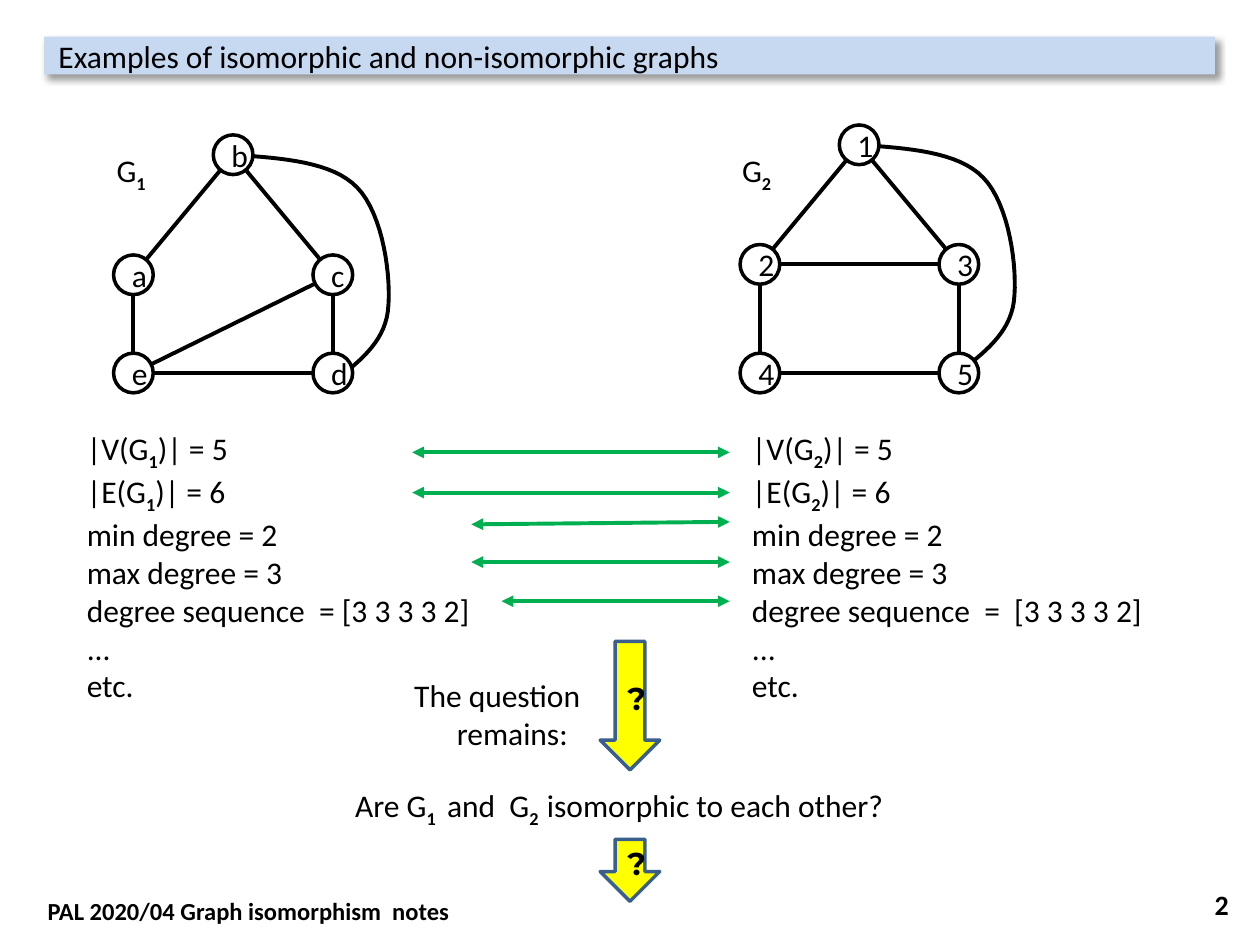
"""Build a slide comparing two graphs and asking whether they are isomorphic."""
from lxml import etree
from pptx import Presentation
from pptx import util as u
from pptx.dml import color
from pptx.enum import shapes, text
from pptx.oxml import ns


def paint(shape, line, width, fill=None):
    shape.shadow.inherit = False
    shape.line.color.rgb = color.RGBColor.from_string(line)
    shape.line.width = u.Pt(width)
    if fill:
        shape.fill.solid()
        shape.fill.fore_color.rgb = color.RGBColor.from_string(fill)
    else:
        shape.fill.background()


def write(frame, lines, size=18, bold=False, font="Calibri", align=text.PP_ALIGN.LEFT):
    """Write lines in which text between underscores is a bold subscript."""
    frame.word_wrap = True
    frame.text = "\n".join(lines)
    for paragraph, line in zip(frame.paragraphs, lines):
        paragraph.alignment = align
        pieces = line.split("_")
        paragraph.text = pieces[0]
        for piece in pieces[1:]:
            paragraph.add_run().text = piece
        for index, run in enumerate(paragraph.runs):
            run.font.name = font
            run.font.size = u.Pt(size)
            run.font.bold = bold or index % 2 == 1
            run.font.color.rgb = color.RGBColor.from_string("000000")
            if index % 2:
                run.font._element.set("baseline", "-25000")


presentation = Presentation()
presentation.slide_width = u.Cm(25.4)
presentation.slide_height = u.Cm(19.05)
slide = presentation.slides.add_slide(presentation.slide_layouts[6])

graphs = [
    ({"b": (4.7, 3.12), "a": (2.69, 5.54), "c": (6.71, 5.54), "e": (2.69, 7.52), "d": (6.71, 7.52)},
     ["ab", "bc", "ae", "ce", "cd", "ed"], "b"),
    ({"1": (17.32, 2.92), "2": (15.32, 5.33), "3": (19.33, 5.33), "4": (15.32, 7.52), "5": (19.33, 7.52)},
     ["12", "13", "23", "24", "35", "45"], "1"),
]
bends = [
    [(0, 0), (1, 0.07), (2, 0.14), (2.5, 0.66)],
    [(2.5, 0.66), (3.03, 1.2), (3.2, 2.5), (3.12, 3.16)],
    [(3.12, 3.16), (3.03, 3.82), (2.5, 4.2), (2, 4.6)],
]
steps = 16
arrow_right = 14.71
arrows = [(8.31, 9.12, 9.12), (8.31, 9.93, 9.93), (9.5, 10.57, 10.52),
          (9.5, 11.33, 11.33), (10.11, 12.12, 12.12)]

links = [(nodes[start], nodes[end], "000000", False)
         for nodes, edges, top in graphs for start, end in edges]
links += [((left, y), (arrow_right, end_y), "00B050", True) for left, y, end_y in arrows]
for start, end, line_color, has_heads in links:
    connector = slide.shapes.add_connector(
        shapes.MSO_CONNECTOR.STRAIGHT, *[u.Cm(value) for value in start + end])
    connector.line.color.rgb = color.RGBColor.from_string(line_color)
    connector.line.width = u.Pt(2.25)
    if has_heads:
        for tag in ("a:headEnd", "a:tailEnd"):
            etree.SubElement(connector.line._get_or_add_ln(), ns.qn(tag), type="triangle")
    etree.SubElement(connector._element.spPr, ns.qn("a:effectLst"))

for nodes, edges, top in graphs:
    x, y = nodes[top]
    points = []
    for bend in bends:
        for step in range(1, steps + 1):
            t = step / steps
            weights = [(1 - t) ** 3, 3 * t * (1 - t) ** 2, 3 * t ** 2 * (1 - t), t ** 3]
            points.append((u.Cm(x + sum(w * p[0] for w, p in zip(weights, bend))),
                           u.Cm(y + sum(w * p[1] for w, p in zip(weights, bend)))))
    builder = slide.shapes.build_freeform(u.Cm(x), u.Cm(y))
    builder.add_line_segments(points, close=False)
    paint(builder.convert_to_shape(), "000000", 2.25)

    for name, (x, y) in nodes.items():
        node = slide.shapes.add_shape(
            shapes.MSO_SHAPE.OVAL, u.Cm(x - 0.4), u.Cm(y - 0.4), u.Cm(0.8), u.Cm(0.8))
        paint(node, "000000", 2, "FFFFFF")
        write(node.text_frame, [name], align=text.PP_ALIGN.CENTER)

labels = [
    (2.1, 2.92, 1.4, 1.02, ["G_1_"], 18, False),
    (14.71, 2.92, 1.4, 1.02, ["G_2_"], 18, False),
    (6.91, 15.72, 12.4, 1.02, ["Are G_1 _ and  G_2  _isomorphic to each other?"], 18, False),
    (8.1, 13.51, 4.19, 1.8, ["The question", "remains:"], 18, False),
    (0.71, 17.93, 23.8, 0.86, ["PAL 2020/04 Graph isomorphism  notes"], 14, True),
]
for number, left, width, gap in ((1, 1.5, 8.61, " "), (2, 14.91, 9.6, "  ")):
    facts = [f"|V(G_{number}_)| = 5", f"|E(G_{number}_)| = 6", "min degree = 2",
             "max degree = 3", f"degree sequence  ={gap}[3 3 3 3 2]", "...", "etc."]
    labels.append((left, 8.53, width, 5.64, facts, 18, False))
for left, top, width, height, lines, size, bold in labels:
    box = slide.shapes.add_textbox(u.Cm(left), u.Cm(top), u.Cm(width), u.Cm(height))
    write(box.text_frame, lines, size, bold)
    box.text_frame.auto_size = text.MSO_AUTO_SIZE.SHAPE_TO_FIT_TEXT
    if lines[-1] == "remains:":
        box.text_frame.paragraphs[1]._p.get_or_add_pPr().set("marL", str(u.Cm(0.86)))

for top, height in ((12.93, 2.59), (16.92, 1.25)):
    arrow = slide.shapes.add_shape(
        shapes.MSO_SHAPE.DOWN_ARROW, u.Cm(12.1), u.Cm(top), u.Cm(1.2), u.Cm(height))
    paint(arrow, "3A5F8C", 2, "FFFF00")
    write(arrow.text_frame, ["?"], bold=True, font="Montserrat", align=text.PP_ALIGN.CENTER)

page_number = slide.shapes.add_textbox(u.Cm(19.1), u.Cm(17.73), u.Cm(5.92), u.Cm(1.02))
page_number.text_frame.vertical_anchor = text.MSO_ANCHOR.MIDDLE
write(page_number.text_frame, ["2"], 16, True, align=text.PP_ALIGN.RIGHT)

title = slide.shapes.add_shape(
    shapes.MSO_SHAPE.RECTANGLE, u.Cm(0.89), u.Cm(0.74), u.Cm(23.6), u.Cm(0.76))
paint(title, "C6D9F1", 1, "C6D9F1")
title.line.fill.background()
frame = title.text_frame
frame.margin_left = u.Cm(0.29)
frame.margin_top = frame.margin_right = frame.margin_bottom = 0
write(frame, ["Examples of isomorphic and non-isomorphic graphs"])
frame.auto_size = text.MSO_AUTO_SIZE.SHAPE_TO_FIT_TEXT
effects = title._element.spPr.find(ns.qn("a:effectLst"))
shadow = etree.SubElement(effects, ns.qn("a:outerShdw"), blurRad=str(u.Pt(4)),
                          dist=str(u.Pt(3)), dir="2700000", algn="tl", rotWithShape="0")
shadow_color = etree.SubElement(shadow, ns.qn("a:srgbClr"), val="000000")
etree.SubElement(shadow_color, ns.qn("a:alpha"), val="40000")

presentation.save("out.pptx")
